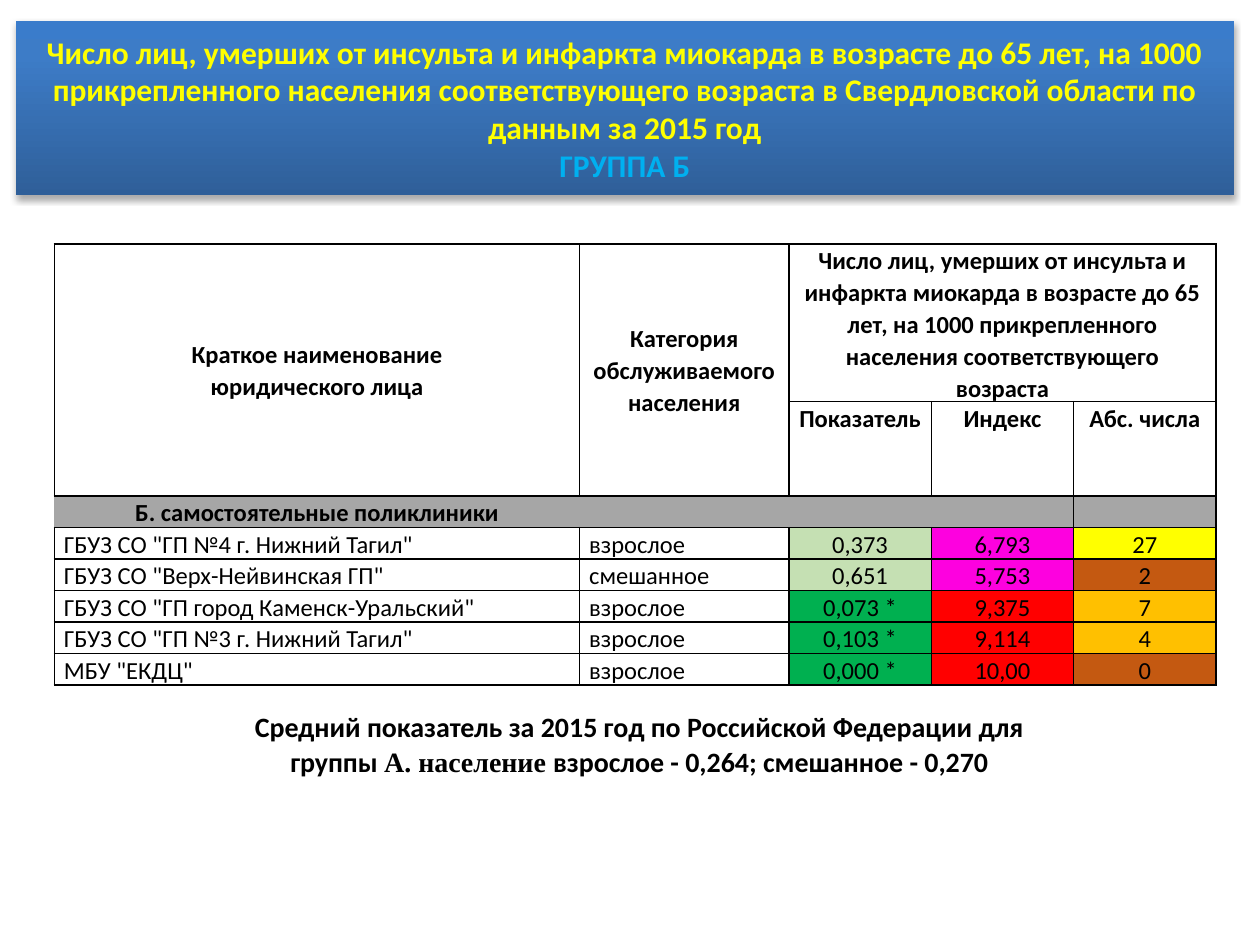
"""Build a slide on stroke and heart attack mortality in polyclinics of group Б."""
import pptx
import pptx.dml.color
import pptx.enum.shapes
import pptx.enum.text
import pptx.oxml
import pptx.oxml.ns
import pptx.util

Pt = pptx.util.Pt
RGBColor = pptx.dml.color.RGBColor
Align = pptx.enum.text.PP_ALIGN
Anchor = pptx.enum.text.MSO_ANCHOR

BLACK = RGBColor(0, 0, 0)
YELLOW = RGBColor(0xFF, 0xFF, 0)
SKY = RGBColor(0, 0xB0, 0xF0)
GREY = RGBColor(0xA6, 0xA6, 0xA6)
PALE_GREEN = RGBColor(0xC5, 0xE0, 0xB3)
GREEN = RGBColor(0, 0xB0, 0x50)
MAGENTA = RGBColor(0xFD, 0x01, 0xDF)
RED = RGBColor(0xFF, 0, 0)
AMBER = RGBColor(0xFF, 0xC0, 0)
BROWN = RGBColor(0xC4, 0x59, 0x11)
BANNER_STOPS = [
    (0, RGBColor(0x2F, 0x5F, 0x99)),
    (80, RGBColor(0x3D, 0x7C, 0xC7)),
    (100, RGBColor(0x3A, 0x7C, 0xCB)),
]

MEASURE = (
    "Число лиц, умерших от инсульта и инфаркта миокарда в возрасте до 65 лет, "
    "на 1000 прикрепленного населения соответствующего возраста"
)
TITLE = [
    (MEASURE + " в Свердловской области по данным за 2015 год", YELLOW),
    ("ГРУППА Б", SKY),
]
HEADER = [
    ["Краткое наименование\nюридического лица", "Категория обслуживаемого населения", MEASURE, "", ""],
    ["", "", "Показатель", "Индекс", "Абс. числа"],
]
SECTION = ["Б. самостоятельные поликлиники", "", "", "", ""]
CLINICS = [
    ['ГБУЗ СО "ГП №4 г. Нижний Тагил"', "взрослое", "0,373", "6,793", "27"],
    ['ГБУЗ СО "Верх-Нейвинская ГП"', "смешанное", "0,651", "5,753", "2"],
    ['ГБУЗ СО "ГП город Каменск-Уральский"', "взрослое", "0,073 *", "9,375", "7"],
    ['ГБУЗ СО "ГП №3 г. Нижний Тагил"', "взрослое", "0,103 *", "9,114", "4"],
    ['МБУ "ЕКДЦ"', "взрослое", "0,000 *", "10,00", "0"],
]
CLINIC_FILLS = [
    (PALE_GREEN, MAGENTA, YELLOW),
    (PALE_GREEN, MAGENTA, BROWN),
    (GREEN, RED, AMBER),
    (GREEN, RED, AMBER),
    (GREEN, RED, BROWN),
]
MERGES = [((0, 0), (1, 0)), ((0, 1), (1, 1)), ((0, 2), (0, 4))]
FOOTNOTE = [
    ("Средний показатель за 2015 год по Российской Федерации для группы ", "Calibri"),
    ("А. население ", "Times New Roman"),
    ("взрослое - 0,264; смешанное - 0,270", "Calibri"),
]

BANNER_PLACE = (8.9, 12.1, 696.3, 99.4)
TABLE_PLACE = (31.1, 139.5)
FOOTNOTE_PLACE = (133.2, 400.3, 464.4, 49)
COLUMN_WIDTHS = [300.2, 119.5, 81.4, 81.4, 81.4]
ROW_HEIGHTS = [90, 54] + [18] * 6
SECTION_ROW = len(HEADER)
TABLE_FONT = {"name": "Calibri", "size": Pt(14)}
CELL_FORMAT = {"margin_left": Pt(5.4), "margin_right": Pt(5.4), "margin_top": 0, "margin_bottom": 0}
LINE_SPACING = 1.07


def set_values(target, values):
    for name, value in values.items():
        setattr(target, name, value)


def add_span(para, text, color=BLACK, **font):
    span = para.add_run()
    span.text = text
    set_values(span.font, font)
    span.font.color.rgb = color


def add_xml(parent, text):
    parent.append(pptx.oxml.parse_xml(text.replace(">", f" {pptx.oxml.ns.nsdecls('a')}>", 1)))


def add_banner(slide):
    banner = slide.shapes.add_shape(
        pptx.enum.shapes.MSO_SHAPE.RECTANGLE, *map(Pt, BANNER_PLACE))
    stops = "".join(
        f'<a:gs pos="{position * 1000}"><a:srgbClr val="{color}"/></a:gs>'
        for position, color in BANNER_STOPS)
    properties = banner.element.spPr
    add_xml(properties, f'<a:gradFill><a:gsLst>{stops}</a:gsLst><a:lin ang="16200000" scaled="0"/></a:gradFill>')
    banner.line.fill.background()
    add_xml(properties, f'<a:effectLst><a:outerShdw blurRad="{Pt(3.5)}" dist="{Pt(2.2)}" dir="5400000" '
            'rotWithShape="0"><a:srgbClr val="000000"><a:alpha val="32000"/></a:srgbClr>'
            '</a:outerShdw></a:effectLst>')
    frame = banner.text_frame
    set_values(frame, {"word_wrap": True, "vertical_anchor": Anchor.MIDDLE})
    for index, (text, color) in enumerate(TITLE):
        para = frame.add_paragraph() if index else frame.paragraphs[0]
        para.alignment = Align.CENTER
        add_span(para, text, color, name="Calibri", size=Pt(18), bold=True)


def add_borders(cell, hidden):
    properties = cell._tc.get_or_add_tcPr()
    for side in "LRTB":
        paint = "<a:noFill/>" if side in hidden else f'<a:solidFill><a:srgbClr val="{BLACK}"/></a:solidFill>'
        add_xml(properties, f'<a:ln{side} w="{Pt(1)}">{paint}</a:ln{side}>')


def write_cell(cell, text, bold, alignment):
    for index, line in enumerate(text.split("\n")):
        para = cell.text_frame.add_paragraph() if index else cell.text_frame.paragraphs[0]
        set_values(para, {"alignment": alignment, "line_spacing": LINE_SPACING})
        if line:
            add_span(para, line, bold=bold, **TABLE_FONT)
        else:
            add_xml(para._p, f'<a:endParaRPr sz="{TABLE_FONT["size"].centipoints}"></a:endParaRPr>')


def add_clinic_table(slide):
    rows = HEADER + [SECTION] + CLINICS
    frame = slide.shapes.add_table(
        len(rows), len(COLUMN_WIDTHS), *map(Pt, TABLE_PLACE),
        Pt(sum(COLUMN_WIDTHS)), Pt(sum(ROW_HEIGHTS)))
    table = frame.table
    set_values(table, {"first_row": False, "horz_banding": False})
    for column, width in zip(table.columns, COLUMN_WIDTHS):
        column.width = Pt(width)
    for row, height in zip(table.rows, ROW_HEIGHTS):
        row.height = Pt(height)
    for first, last in MERGES:
        table.cell(*first).merge(table.cell(*last))
    fills = [[None] * 5] * len(HEADER) + [[GREY] * 5] + [(None, None, *colors) for colors in CLINIC_FILLS]
    last_column = len(COLUMN_WIDTHS) - 1
    for row, texts in enumerate(rows):
        for column, text in enumerate(texts):
            cell = table.cell(row, column)
            set_values(cell, CELL_FORMAT)
            if row < SECTION_ROW and column < 2:
                cell.vertical_anchor = Anchor.MIDDLE
            centred = row <= SECTION_ROW or column > 1
            write_cell(cell, text, row <= SECTION_ROW, Align.CENTER if centred else Align.LEFT)
            hidden = ""
            if row == SECTION_ROW and column < last_column:
                hidden = "L" if column == last_column - 1 else "LR"
            add_borders(cell, hidden)
            if fills[row][column] is None:
                cell.fill.background()
            else:
                cell.fill.solid()
                cell.fill.fore_color.rgb = fills[row][column]


def add_footnote(slide):
    box = slide.shapes.add_textbox(*map(Pt, FOOTNOTE_PLACE))
    box.text_frame.word_wrap = True
    para = box.text_frame.paragraphs[0]
    set_values(para, {"alignment": Align.CENTER, "line_spacing": LINE_SPACING})
    for text, name in FOOTNOTE:
        add_span(para, text, name=name, size=Pt(16), bold=True)


def main():
    deck = pptx.Presentation()
    set_values(deck, {"slide_width": Pt(720), "slide_height": Pt(540)})
    slide = deck.slides.add_slide(deck.slide_layouts[6])
    add_banner(slide)
    add_footnote(slide)
    add_clinic_table(slide)
    deck.save("out.pptx")


if __name__ == "__main__":
    main()
